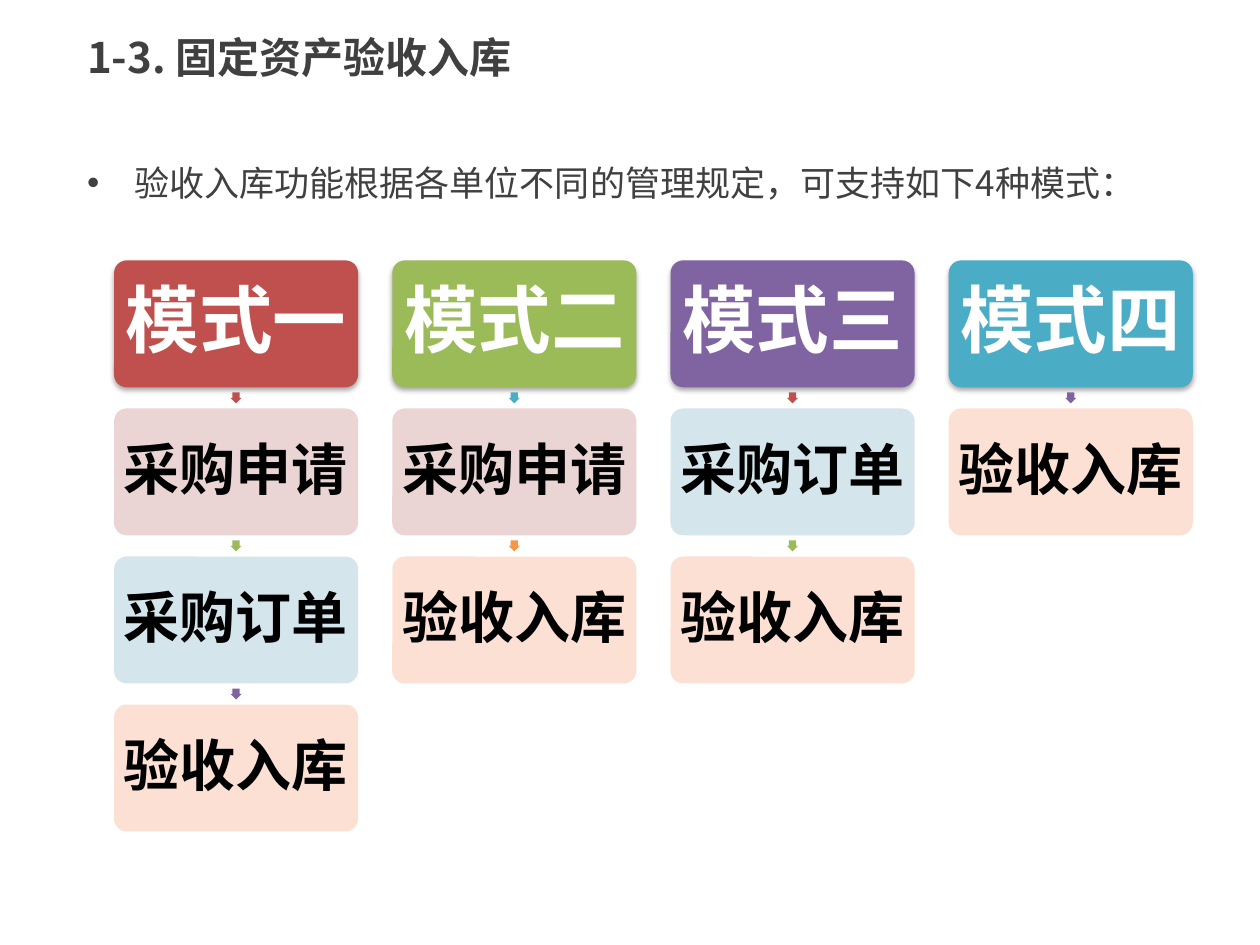
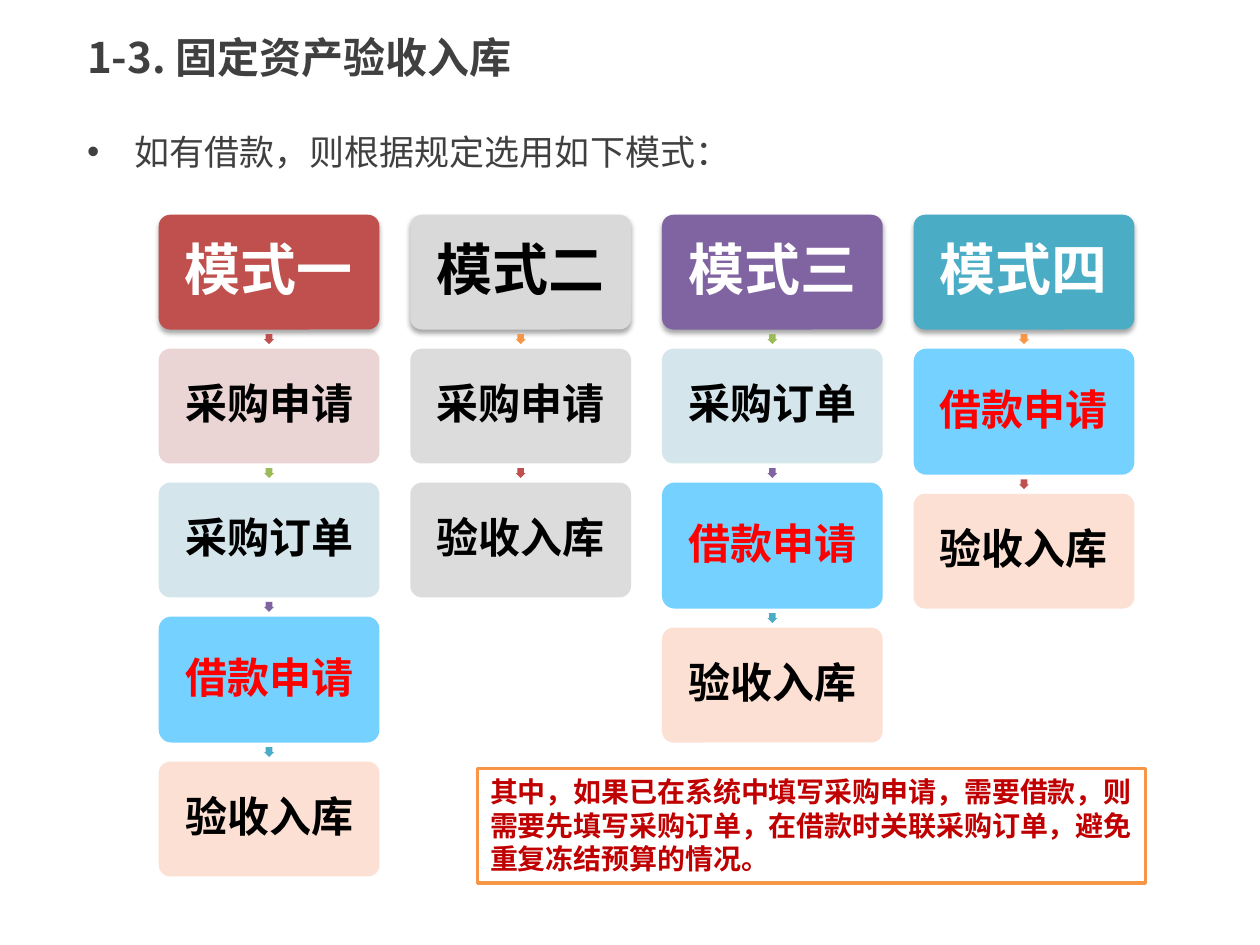
from itertools import cycle

from lxml.etree import SubElement
from pptx import Presentation
from pptx.dml.color import RGBColor
from pptx.enum.shapes import MSO_SHAPE as Shape
from pptx.enum.text import MSO_ANCHOR as Anchor, MSO_AUTO_SIZE as AutoSize, PP_ALIGN as Align
from pptx.oxml.ns import qn
from pptx.util import Cm, Pt

RED, GREEN, PURPLE, TEAL, ORANGE = "C0504D", "9BBB59", "8064A2", "4BACC6", "F79646"
WHITE, BLACK, GREY, DARK = "FFFFFF", "000000", "D9D9D9", "404040"
LOAN = "借款申请"
STEP_FILLS = {"采购申请": "E8D0D0", "采购订单": "D0E3EA", LOAN: "66CCFF", "验收入库": "FCDDCF"}

TITLE = "1-3. 固定资产验收入库"
HEADING_FORMAT = {"name": "Noto Sans CJK SC", "size": Pt(24), "bold": True}
LEAD_FORMAT = {"name": "Noto Sans CJK SC", "size": Pt(20)}
NOTE_FORMAT = {"name": "Calibri", "size": Pt(16), "bold": True}
NOTE = "其中，如果已在系统中填写采购申请，需要借款，则需要先填写采购订单，在借款时关联采购订单，避免重复冻结预算的情况。"

# Lengths are in centimetres, text sizes in points.
SLIDES = [
    {
        "lead": "验收入库功能根据各单位不同的管理规定，可支持如下4种模式：", "lead_top": 3.12,
        "left": 2.3, "top": 5.25, "width": 4.92, "arrow": 0.22,
        "mode_size": 42, "mode_inset": 0.15, "step_size": 32,
        "modes": [
            ("模式一", RED, ["采购申请", "采购订单", "验收入库"]),
            ("模式二", GREEN, ["采购申请", "验收入库"]),
            ("模式三", PURPLE, ["采购订单", "验收入库"]),
            ("模式四", TEAL, ["验收入库"]),
        ],
    },
    {
        "lead": "如有借款，则根据规定选用如下模式：", "lead_top": 2.51,
        "left": 3.2, "top": 4.33, "width": 4.45, "arrow": 0.2,
        "mode_size": 32, "mode_inset": 0.1, "step_size": 24,
        "modes": [
            ("模式一", RED, ["采购申请", "采购订单", LOAN, "验收入库"]),
            ("模式二", GREY, ["采购申请", "验收入库"]),
            ("模式三", PURPLE, ["采购订单", LOAN, "验收入库"]),
            ("模式四", TEAL, [LOAN, "验收入库"]),
        ],
        "note": NOTE,
    },
]

COLUMN_PITCH = 1.14   # of the box width
BOX_HEIGHT = 0.52     # of the box width
LOAN_HEIGHT = 2.54
GAP = 1 / 6           # of the box height


def rgb(color):
    return RGBColor.from_string(color)


def write(frame, text, color, formats):
    """Put one formatted run in the frame and return its paragraph."""
    para = frame.paragraphs[0]
    span = para.add_run()
    span.text = text
    for name, value in formats.items():
        setattr(span.font, name, value)
    span.font.color.rgb = rgb(color)
    if formats["name"] != "Calibri":
        SubElement(span.font._element, qn("a:ea"), typeface=formats["name"])
    return para


def fill_placeholder(holder, place, text, formats):
    holder.left, holder.top, holder.width, holder.height = map(Cm, place)
    frame = holder.text_frame
    frame.auto_size = AutoSize.NONE
    para = write(frame, text, DARK, formats)
    para.alignment = Align.LEFT
    return frame


def add_plain_shape(page, kind, place, fill):
    shape = page.shapes.add_shape(kind, *map(Cm, place))
    shape.shadow.inherit = False
    shape.fill.solid()
    shape.fill.fore_color.rgb = rgb(fill)
    shape.line.fill.background()
    return shape


def add_box(page, place, fill, text, color, size, inset):
    box = add_plain_shape(page, Shape.ROUNDED_RECTANGLE, place, fill)
    box.adjustments[0] = 0.1
    frame = box.text_frame
    frame.word_wrap = True
    frame.vertical_anchor = Anchor.MIDDLE
    for side in ("left", "top", "right", "bottom"):
        setattr(frame, f"margin_{side}", Cm(inset))
    para = write(frame, text, color, {"name": "Calibri", "size": Pt(size), "bold": True})
    para.alignment = Align.CENTER
    para.line_spacing = 0.9
    return box


def add_alpha(color_element, percent):
    SubElement(color_element, qn("a:alpha"), val=str(percent * 1000))


def add_shadow(box):
    effects = box._element.spPr.find(qn("a:effectLst"))
    shadow = SubElement(effects, qn("a:outerShdw"), blurRad=str(Pt(3.1)), dist=str(Pt(1.8)),
                        dir="5400000", rotWithShape="0")
    add_alpha(SubElement(shadow, qn("a:srgbClr"), val=BLACK), 35)


def add_arrow(page, center_x, center_y, side, fill):
    place = (center_x - side / 2, center_y - side / 2, side, side)
    arrow = add_plain_shape(page, Shape.DOWN_ARROW, place, fill)
    arrow.adjustments[0] = 0.667
    arrow.adjustments[1] = 0.5


def add_modes(page, plan):
    """Draw each mode as a column; arrow colours cycle on across columns."""
    arrow_fills = cycle([RED, GREEN, PURPLE, TEAL, ORANGE])
    width = plan["width"]
    height = width * BOX_HEIGHT
    gap = height * GAP
    for column, (mode, mode_fill, steps) in enumerate(plan["modes"]):
        left = plan["left"] + column * width * COLUMN_PITCH
        unused = mode_fill == GREY
        header = add_box(page, (left, plan["top"], width, height), mode_fill, mode,
                         BLACK if unused else WHITE, plan["mode_size"], plan["mode_inset"])
        add_shadow(header)
        bottom = plan["top"] + height
        for step in steps:
            add_arrow(page, left + width / 2, bottom + gap / 2, plan["arrow"], next(arrow_fills))
            step_height = LOAN_HEIGHT if step == LOAN else height
            box = add_box(page, (left, bottom + gap, width, step_height),
                          GREY if unused else STEP_FILLS[step], step,
                          "FF0000" if step == LOAN else BLACK, plan["step_size"], 0.1)
            add_alpha(box._element.spPr.find(qn("a:solidFill"))[0], 90)
            bottom += gap + step_height


def add_note(page, text):
    note = add_plain_shape(page, Shape.RECTANGLE, (9.63, 15.49, 13.46, 2.31), WHITE)
    note.line.color.rgb = rgb(ORANGE)
    note.line.width = Pt(2)
    frame = note.text_frame
    frame.word_wrap = True
    frame.auto_size = AutoSize.SHAPE_TO_FIT_TEXT
    frame.vertical_anchor = Anchor.TOP
    write(frame, text, "C00000", NOTE_FORMAT).alignment = Align.LEFT


def main():
    deck = Presentation()
    deck.slide_width, deck.slide_height = Cm(25.4), Cm(19.05)
    for plan in SLIDES:
        page = deck.slides.add_slide(deck.slide_layouts[1])
        heading = fill_placeholder(page.shapes.title, (1.5, 0.3, 22.58, 1.7), TITLE, HEADING_FORMAT)
        heading.vertical_anchor = Anchor.MIDDLE
        fill_placeholder(page.placeholders[1], (1.5, plan["lead_top"], 22.86, 2.21),
                         plan["lead"], LEAD_FORMAT)
        add_modes(page, plan)
        if "note" in plan:
            add_note(page, plan["note"])
    deck.save("out.pptx")


if __name__ == "__main__":
    main()
